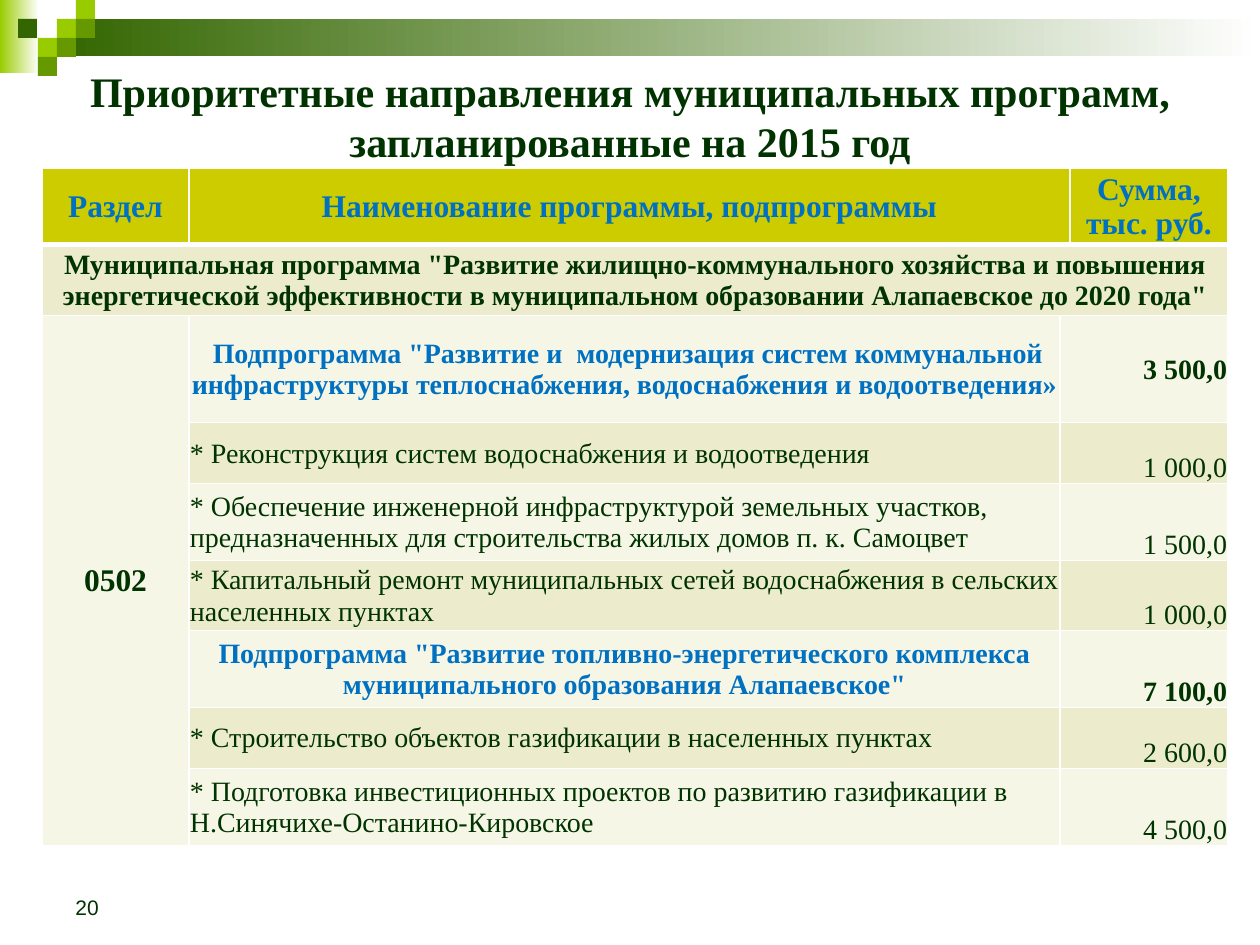
"""Build a slide with a table of priority municipal programmes for 2015."""
from typing import NamedTuple

from lxml import etree
from pptx import Presentation
from pptx import util as u
from pptx.dml.color import RGBColor
from pptx.enum import shapes, text
from pptx.oxml.ns import qn

PX = 914400 / 126
DARK = RGBColor(0x00, 0x33, 0x00)
BLUE = RGBColor(0x00, 0x70, 0xC0)
WHITE = RGBColor(0xFF, 0xFF, 0xFF)
LIME = RGBColor(0x99, 0xCC, 0x00)
GREEN = RGBColor(0x66, 0x99, 0x00)
FOREST = RGBColor(0x33, 0x66, 0x00)
OLIVE = RGBColor(0xCC, 0xCC, 0x00)
CREAM = RGBColor(0xEC, 0xEC, 0xCC)
PALE = RGBColor(0xF6, 0xF6, 0xE7)
LEFT, MID, RIGHT = text.PP_ALIGN.LEFT, text.PP_ALIGN.CENTER, text.PP_ALIGN.RIGHT
MIDDLE, BOTTOM = text.MSO_ANCHOR.MIDDLE, text.MSO_ANCHOR.BOTTOM


class Box(NamedTuple):
    left: int
    top: int
    width: int
    height: int


class Block(NamedTuple):
    box: Box
    color: RGBColor
    fade: bool = False


class Item(NamedTuple):
    name: str
    total: str
    head: bool = False


BLOCKS = [
    Block(Box(0, 0, 39, 73), LIME, True),
    Block(Box(57, 19, 1203, 37), FOREST, True),
    Block(Box(57, 19, 19, 19), LIME),
    Block(Box(76, 0, 19, 19), LIME),
    Block(Box(76, 19, 19, 19), GREEN),
    Block(Box(38, 38, 19, 19), LIME),
    Block(Box(18, 19, 19, 19), FOREST),
    Block(Box(57, 38, 19, 19), GREEN),
    Block(Box(38, 57, 19, 19), GREEN),
]
COLS = [147, 871, 10, 158]
ROWS = [75, 71, 107, 61, 77, 70, 77, 61, 77]
HEADS = {0: "Раздел", 1: "Наименование программы, подпрограммы", 3: "Сумма, тыс. руб."}
GOAL = (
    'Муниципальная программа "Развитие жилищно-коммунального хозяйства и повышения '
    'энергетической эффективности в муниципальном образовании Алапаевское до 2020 года"'
)
ITEMS = [
    Item(' Подпрограмма "Развитие и  модернизация систем коммунальной инфраструктуры '
         'теплоснабжения, водоснабжения и водоотведения»', "3 500,0", True),
    Item("* Реконструкция систем водоснабжения и водоотведения", "1 000,0"),
    Item("* Обеспечение инженерной инфраструктурой земельных участков, предназначенных "
         "для строительства жилых домов п. к. Самоцвет", "1 500,0"),
    Item("* Капитальный ремонт муниципальных сетей водоснабжения в сельских населенных "
         "пунктах", "1 000,0"),
    Item('Подпрограмма "Развитие топливно-энергетического комплекса муниципального '
         'образования Алапаевское"', "7 100,0", True),
    Item("* Строительство объектов газификации в населенных пунктах", "2 600,0"),
    Item("* Подготовка инвестиционных проектов по развитию газификации в "
         "Н.Синячихе-Останино-Кировское", "4 500,0"),
]


def px(size: int) -> int:
    return round(size * PX)


def place(box: Box) -> list[int]:
    return [px(side) for side in box]


def write(frame, words: str, *, size: int = 16, color: RGBColor = DARK,
          bold: bool = False, align=LEFT, font: str = "Times New Roman") -> None:
    line = frame.paragraphs[0]
    line.alignment = align
    run = line.add_run()
    run.text = words
    run.font.name = font
    run.font.size = u.Pt(size)
    run.font.bold = bold
    run.font.color.rgb = color


def label(slide, box: Box, words: str, anchor, **style) -> None:
    frame = slide.shapes.add_textbox(*place(box)).text_frame
    frame.word_wrap = True
    frame.vertical_anchor = anchor
    write(frame, words, **style)


def draw(slide, block: Block) -> None:
    shape = slide.shapes.add_shape(shapes.MSO_SHAPE.RECTANGLE, *place(block.box))
    shape.shadow.inherit = False
    shape.line.fill.background()
    if block.fade:
        shape.fill.gradient()
        shape.fill.gradient_angle = 0
        for stop, color in zip(shape.fill.gradient_stops, (block.color, WHITE)):
            stop.color.rgb = color
    else:
        shape.fill.solid()
        shape.fill.fore_color.rgb = block.color


def edge(cell, base: int) -> None:
    props = cell._tc.get_or_add_tcPr()
    for spot, side in enumerate("LRTB"):
        width = base if side == "B" else 1
        line = etree.Element(qn(f"a:ln{side}"), w=str(u.Pt(width)))
        fill = etree.SubElement(line, qn("a:solidFill"))
        etree.SubElement(fill, qn("a:srgbClr"), val=str(WHITE))
        props.insert(spot, line)


def shade(cell, row: int) -> None:
    cell.fill.solid()
    cell.fill.fore_color.rgb = OLIVE if row == 0 else CREAM if row % 2 else PALE
    cell.margin_left = cell.margin_right = cell.margin_top = px(1)
    cell.margin_bottom = 0
    cell.vertical_anchor = MIDDLE
    edge(cell, 3 if row == 0 else 1)


def chart(slide) -> None:
    box = Box(42, 168, sum(COLS), sum(ROWS))
    grid = slide.shapes.add_table(len(ROWS), len(COLS), *place(box)).table
    for col, width in zip(grid.columns, COLS):
        col.width = px(width)
    for row, height in enumerate(ROWS):
        grid.rows[row].height = px(height)
        for col in range(len(COLS)):
            shade(grid.cell(row, col), row)

    grid.cell(0, 1).merge(grid.cell(0, 2))
    for col, words in HEADS.items():
        write(grid.cell(0, col).text_frame, words, size=18, color=BLUE, bold=True, align=MID)

    grid.cell(1, 0).merge(grid.cell(1, 3))
    write(grid.cell(1, 0).text_frame, GOAL, bold=True, align=MID)

    grid.cell(2, 0).merge(grid.cell(len(ROWS) - 1, 0))
    write(grid.cell(2, 0).text_frame, "0502", size=18, bold=True, align=MID)

    for row, item in enumerate(ITEMS, 2):
        write(grid.cell(row, 1).text_frame, item.name, bold=item.head,
              color=BLUE if item.head else DARK, align=MID if item.head else LEFT)
        cell = grid.cell(row, 2)
        cell.merge(grid.cell(row, 3))
        cell.vertical_anchor = MIDDLE if row == 2 else BOTTOM
        write(cell.text_frame, item.total, bold=item.head, align=RIGHT)


def main() -> None:
    deck = Presentation()
    deck.slide_width, deck.slide_height = px(1260), px(945)
    slide = deck.slides.add_slide(deck.slide_layouts[6])
    for block in BLOCKS:
        draw(slide, block)
    label(slide, Box(63, 63, 1134, 105),
          "Приоритетные направления муниципальных программ, запланированные на 2015 год",
          MIDDLE, size=24, bold=True, align=MID)
    chart(slide)
    label(slide, Box(63, 861, 294, 65), "20", BOTTOM, size=12, font="Arial")
    deck.save("out.pptx")


if __name__ == "__main__":
    main()
